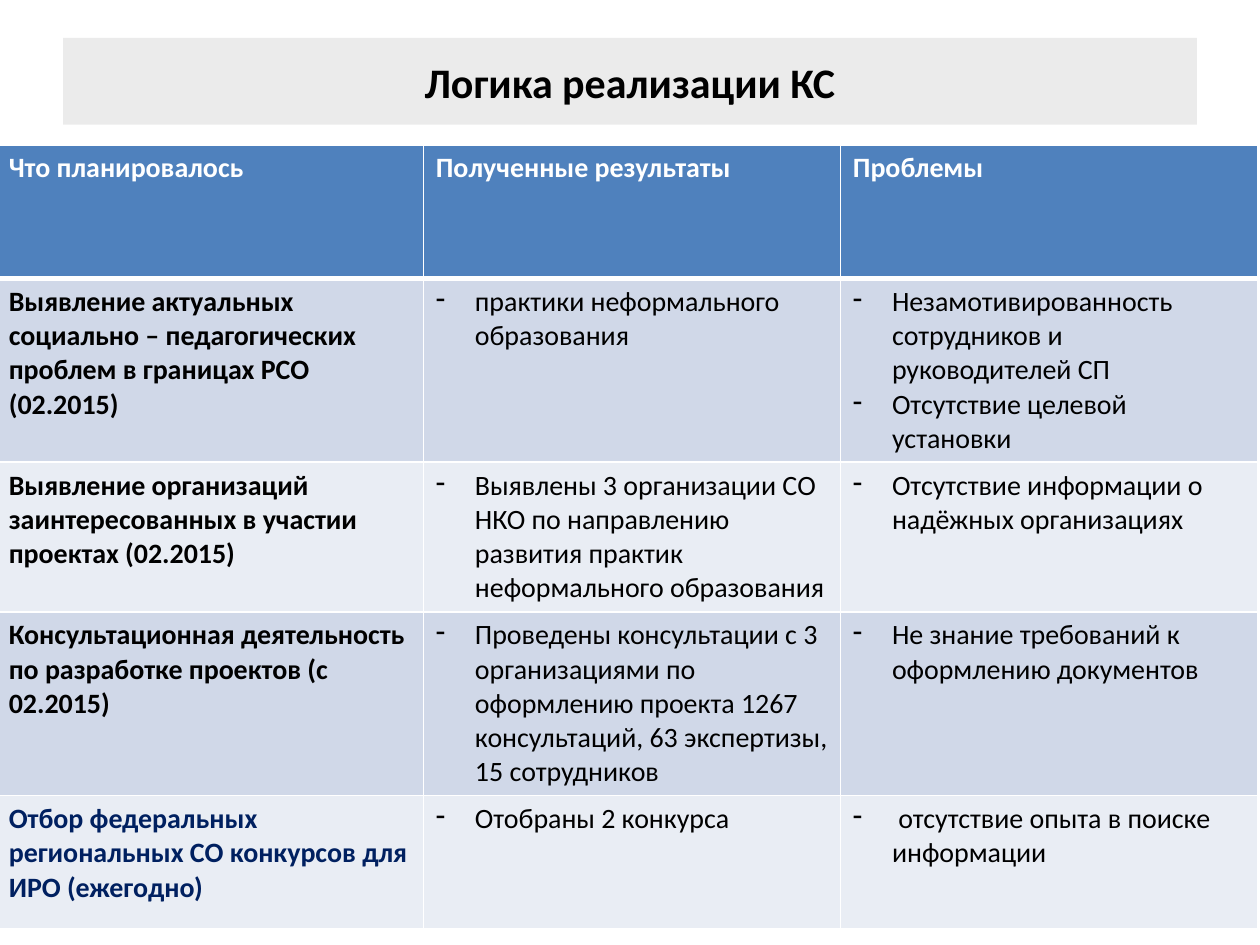
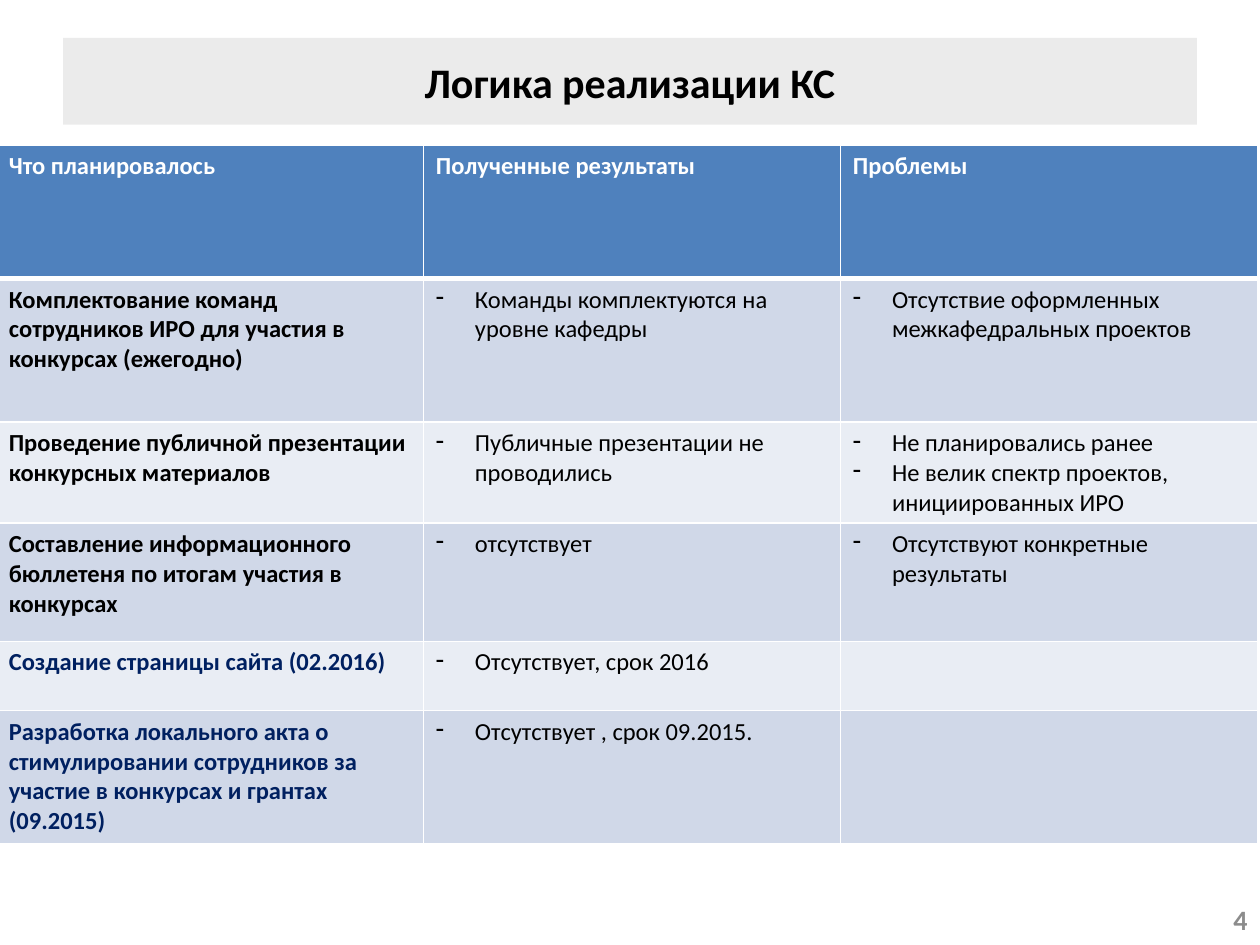
"""Build two slides that compare plans, results and problems of a project."""
from dataclasses import dataclass

from lxml import etree
from pptx import Presentation
from pptx.dml.color import RGBColor
from pptx.enum.text import MSO_ANCHOR, PP_ALIGN
from pptx.oxml.ns import qn
from pptx.util import Inches, Pt

MIDDLE = MSO_ANCHOR.MIDDLE
LEFT, CENTER, RIGHT = PP_ALIGN.LEFT, PP_ALIGN.CENTER, PP_ALIGN.RIGHT

FONT = "Calibri"
BLACK, WHITE, NAVY, GRAY = "000000", "FFFFFF", "002060", "8C8C8C"
BAND, HEADER = "BFBFBF", "4F81BD"
STRIPES = ("D0D8E8", "E9EDF4")
BAND_OPACITY = 30
TITLE = "Логика реализации КС"
HEADINGS = ("Что планировалось", "Полученные результаты", "Проблемы")
COLUMN_WIDTHS = (3.39, 3.31, 3.31)
HEADER_HEIGHT = 1.06
HANGING = Inches(0.31)


@dataclass(frozen=True)
class Stage:
    """One planned stage with its results and problems."""
    plan: str
    results: tuple[str, ...]
    problems: tuple[str, ...]
    height: float
    highlighted: bool = False


@dataclass(frozen=True)
class StageSlide:
    """Content of one slide."""
    stages: tuple[Stage, ...]
    text_size: int
    page: str = ""


SLIDES = (
    StageSlide((
        Stage("Выявление актуальных социально – педагогических проблем в границах РСО (02.2015)",
              ("практики неформального образования",),
              ("Незамотивированность сотрудников и руководителей СП",
               "Отсутствие целевой установки"), 1.14),
        Stage("Выявление организаций заинтересованных в участии проектах (02.2015)",
              ("Выявлены 3 организации СО НКО по направлению развития практик "
               "неформального образования",),
              ("Отсутствие информации о надёжных организациях",), 1.18),
        Stage("Консультационная деятельность по разработке проектов (с 02.2015)",
              ("Проведены консультации с 3 организациями по оформлению проекта "
               "1267 консультаций, 63 экспертизы, 15 сотрудников",),
              ("Не знание требований к оформлению документов",), 1.45),
        Stage("Отбор федеральных региональных СО конкурсов для ИРО (ежегодно)",
              ("Отобраны 2 конкурса",),
              (" отсутствие опыта в поиске информации",), 1.06, True),
    ), 16),
    StageSlide((
        Stage("Комплектование команд сотрудников ИРО для участия в конкурсах (ежегодно)",
              ("Команды комплектуются на уровне кафедры",),
              ("Отсутствие оформленных межкафедральных проектов",), 1.14),
        Stage("Проведение публичной презентации конкурсных материалов",
              ("Публичные презентации не проводились",),
              ("Не планировались ранее",
               "Не велик спектр проектов, инициированных ИРО"), 0.71),
        Stage("Составление информационного бюллетеня по итогам участия в конкурсах",
              ("отсутствует",),
              ("Отсутствуют конкретные результаты",), 0.94),
        Stage("Создание страницы сайта (02.2016)",
              ("Отсутствует, срок 2016",), (), 0.55, True),
        Stage("Разработка локального акта о стимулировании сотрудников за участие "
              "в конкурсах и грантах (09.2015)",
              ("Отсутствует , срок 09.2015.",), (), 1.06, True),
    ), 14, "4"),
)


def paint(target, color: str) -> None:
    """Give a fill a solid colour."""
    target.fill.solid()
    target.fill.fore_color.rgb = RGBColor.from_string(color)


def write(frame, *lines: str, size: int, color: str = BLACK, bold: bool = False,
          align=LEFT, after: int = 0, dashed: bool = False) -> None:
    """Write one paragraph per line, with dash bullets on request."""
    for index, line in enumerate(lines):
        paragraph = frame.paragraphs[0] if index == 0 else frame.add_paragraph()
        paragraph.alignment = align
        if after:
            paragraph.space_after = Pt(after)
        if dashed:
            properties = paragraph._p.get_or_add_pPr()
            properties.set("marL", str(HANGING))
            properties.set("indent", str(-HANGING))
            etree.SubElement(properties, qn("a:buFontTx"))
            etree.SubElement(properties, qn("a:buChar"), char="-")
        run = paragraph.add_run()
        run.text = line
        run.font.name = FONT
        run.font.size = Pt(size)
        run.font.bold = bold
        run.font.color.rgb = RGBColor.from_string(color)


def add_borders(cell, top: int = 1, bottom: int = 1) -> None:
    """Draw white borders around a cell."""
    properties = cell._tc.get_or_add_tcPr()
    widths = {"a:lnL": 1, "a:lnR": 1, "a:lnT": top, "a:lnB": bottom}
    for index, (side, width) in enumerate(widths.items()):
        border = etree.Element(qn(side), w=str(Pt(width)))
        fill = etree.SubElement(border, qn("a:solidFill"))
        etree.SubElement(fill, qn("a:srgbClr"), val=WHITE)
        properties.insert(index, border)


def add_title(slide) -> None:
    """Place the title on its translucent band."""
    title = slide.shapes.title
    title.left, title.top = Inches(0.5), Inches(0.3)
    title.width, title.height = Inches(9), Inches(0.69)
    paint(title, BAND)
    band_color = next(title.element.iter(qn("a:srgbClr")))
    etree.SubElement(band_color, qn("a:alpha"), val=str(BAND_OPACITY * 1000))
    title.text_frame.vertical_anchor = MIDDLE
    write(title.text_frame, TITLE, size=24, bold=True, align=CENTER)


def add_page_number(slide, page: str) -> None:
    """Write the page number in the lower right corner."""
    corner = slide.shapes.add_textbox(Inches(7.67), Inches(7.1), Inches(2.33), Inches(0.4))
    corner.text_frame.word_wrap = True
    corner.text_frame.vertical_anchor = MIDDLE
    write(corner.text_frame, page, size=16, color=GRAY, bold=True, align=RIGHT)


def add_stage_table(slide, content: StageSlide) -> None:
    """Draw the header row and one striped row per stage."""
    heights = (HEADER_HEIGHT, *(stage.height for stage in content.stages))
    table = slide.shapes.add_table(
        len(heights), len(HEADINGS), Inches(-0.03), Inches(1.15),
        Inches(sum(COLUMN_WIDTHS)), Inches(sum(heights))).table
    table.horz_banding = False
    for column, width in zip(table.columns, COLUMN_WIDTHS):
        column.width = Inches(width)
    for row, height in zip(table.rows, heights):
        row.height = Inches(height)

    size = content.text_size
    for column, heading in enumerate(HEADINGS):
        cell = table.cell(0, column)
        paint(cell, HEADER)
        add_borders(cell, bottom=3)
        write(cell.text_frame, heading, size=size, color=WHITE, bold=True)

    for row, stage in enumerate(content.stages, 1):
        plan, results, problems = (table.cell(row, column) for column in range(len(HEADINGS)))
        for cell in (plan, results, problems):
            paint(cell, STRIPES[(row - 1) % 2])
            add_borders(cell, top=3 if row == 1 else 1)
        write(plan.text_frame, stage.plan, size=size, bold=True,
              color=NAVY if stage.highlighted else BLACK,
              after=10 if stage.highlighted else 0)
        write(results.text_frame, *stage.results, size=size, dashed=True)
        write(problems.text_frame, *stage.problems, size=size, dashed=True)


def main() -> None:
    """Build and save the presentation."""
    deck = Presentation()
    deck.slide_width, deck.slide_height = Inches(10), Inches(7.5)
    title_only = deck.slide_layouts.get_by_name("Title Only")
    for content in SLIDES:
        slide = deck.slides.add_slide(title_only)
        add_title(slide)
        if content.page:
            add_page_number(slide, content.page)
        add_stage_table(slide, content)
    deck.save("out.pptx")


if __name__ == "__main__":
    main()
